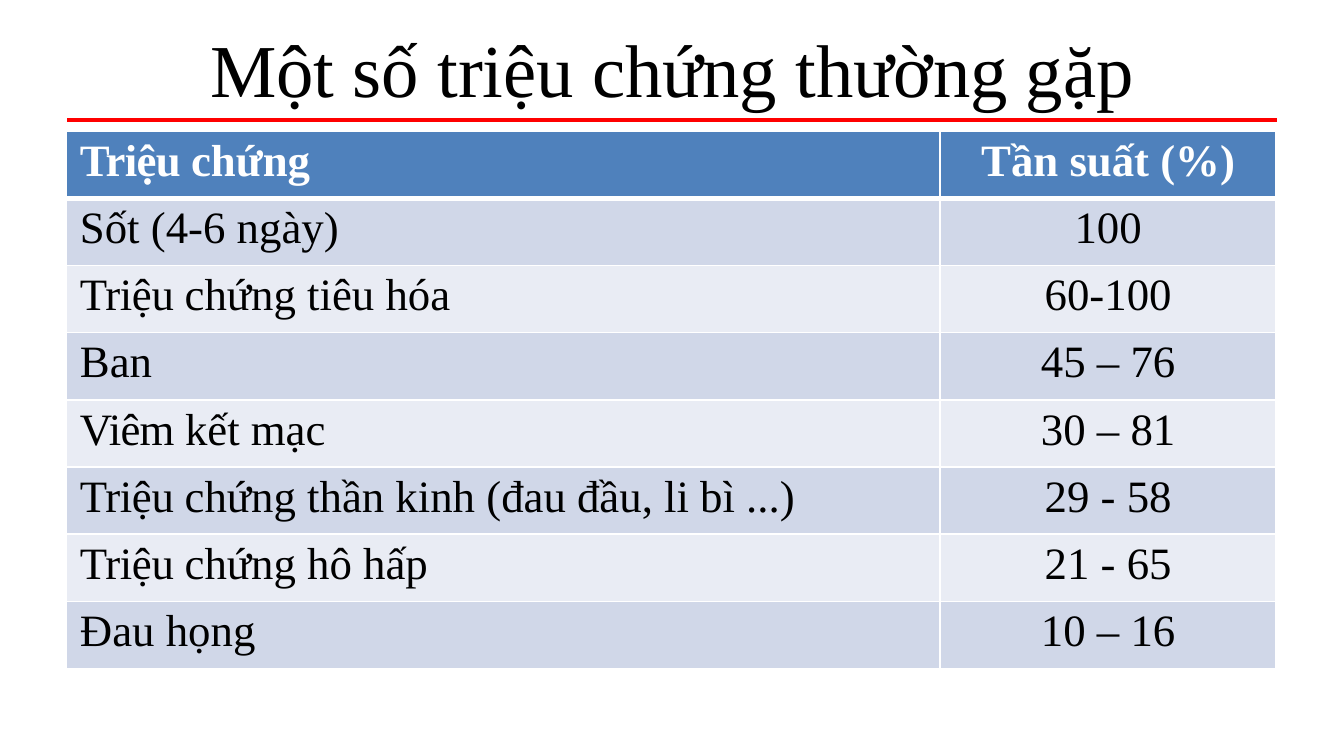
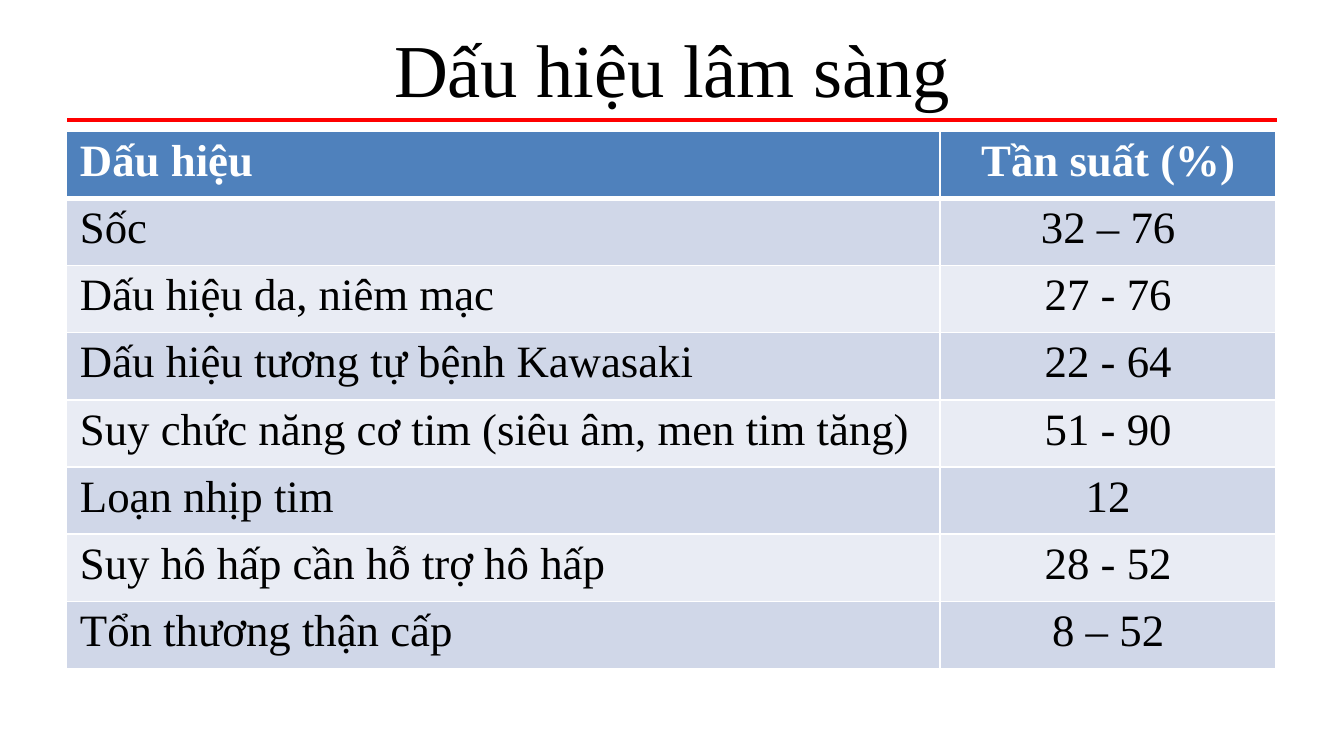
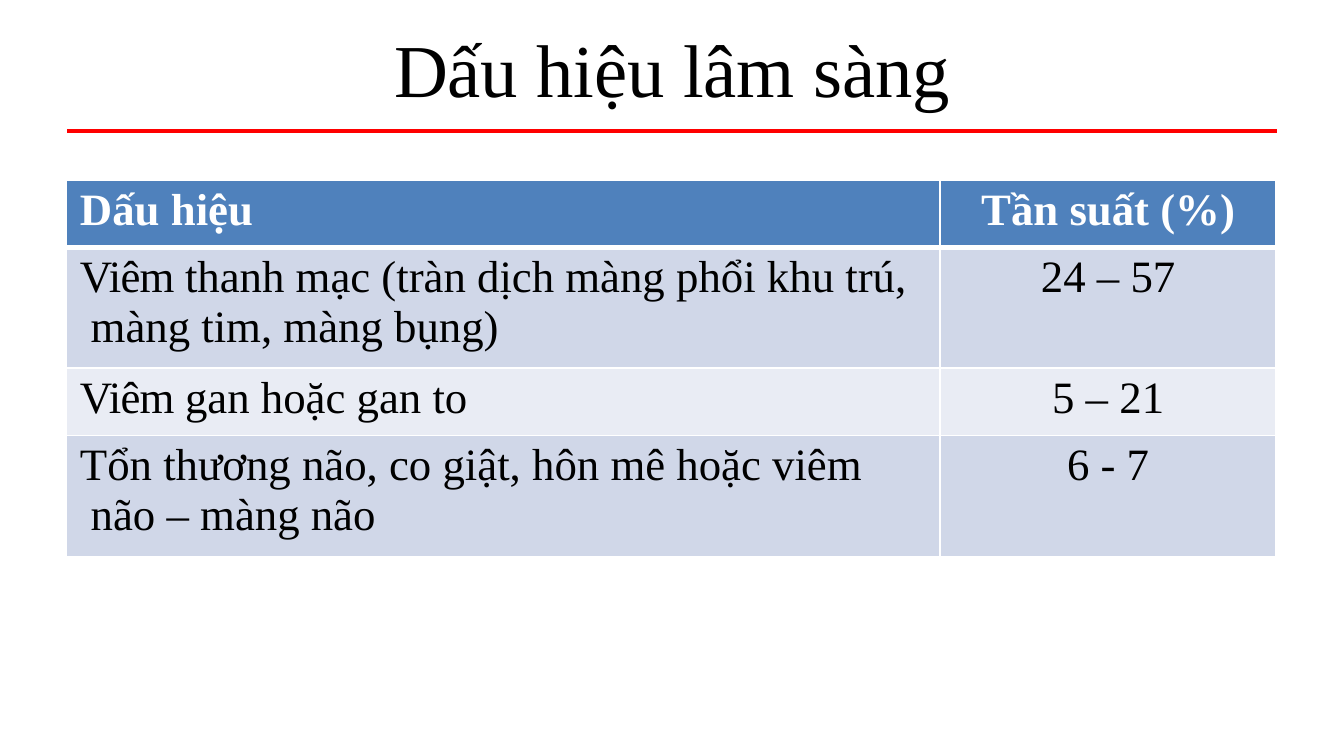
import dataclasses
import typing

import pptx
import pptx.dml.color
import pptx.enum.shapes
import pptx.enum.text
import pptx.oxml
import pptx.oxml.ns
import pptx.presentation
import pptx.slide
import pptx.table
import pptx.text.text
import pptx.util


@dataclasses.dataclass(frozen=True)
class Theme:
    font: str = "Times New Roman"
    title: float = 40
    body: float = 24
    rule: float = 2.25
    thin: float = 1
    thick: float = 3
    ink: str = "000000"
    white: str = "FFFFFF"
    head: str = "4F81BC"
    bands: tuple[str, str] = ("D0D7E8", "E9ECF4")
    red: str = "FF0000"


class Bit(typing.NamedTuple):
    text: str
    track: float = 0


class Row(typing.NamedTuple):
    label: tuple[Bit, ...]
    rate: str
    tall: float = 1


class Page(typing.NamedTuple):
    title: str
    span: float
    line: float
    top: float
    rows: tuple[Row, ...]


THEME = Theme()
WIDTH = pptx.util.Inches(10)
HEIGHT = WIDTH * 9 // 16
UNIT = WIDTH / 20
COLS = (13, 5)
RATE = "Tần suất (%)"
ALIGN = pptx.enum.text.PP_ALIGN


def grid(count: float) -> int:
    return round(count * UNIT)


def color(code: str) -> pptx.dml.color.RGBColor:
    return pptx.dml.color.RGBColor.from_string(code)


def row(text: str, rate: str, lead: str = "", track: float = 0, tall: float = 1) -> Row:
    bits = (Bit(lead, track), Bit(text)) if lead else (Bit(text),)
    return Row(bits, rate, tall)


def write(para: pptx.text.text._Paragraph, bits: tuple[Bit, ...], size: float,
          tint: str, bold: bool = False) -> None:
    for bit in bits:
        run = para.add_run()
        run.text = bit.text
        run.font.name = THEME.font
        run.font.size = pptx.util.Pt(size)
        run.font.bold = bold
        run.font.color.rgb = color(tint)
        if bit.track:
            run.font._element.set("spc", str(round(bit.track * 100)))


def title(slide: pptx.slide.Slide, text: str, span: float) -> None:
    box = slide.shapes.add_textbox(grid(10 - span / 2), grid(0.32), grid(span), grid(1.38))
    frame = box.text_frame
    frame.word_wrap = False
    frame.margin_left = frame.margin_right = frame.margin_bottom = 0
    frame.margin_top = pptx.util.Inches(0.01)
    para = frame.paragraphs[0]
    para.alignment = ALIGN.CENTER
    para.space_before = pptx.util.Pt(0.9)
    write(para, (Bit(text, -0.05),), THEME.title, THEME.ink)


def rule(slide: pptx.slide.Slide, top: float) -> None:
    line = slide.shapes.add_connector(
        pptx.enum.shapes.MSO_CONNECTOR.STRAIGHT, grid(1), grid(top), grid(19), grid(top))
    line.line.color.rgb = color(THEME.red)
    line.line.width = pptx.util.Pt(THEME.rule)
    line._element.spPr.append(pptx.oxml.parse_xml(
        f'<a:effectLst {pptx.oxml.ns.nsdecls("a")}/>'))


def edge(cell: pptx.table._Cell, index: int) -> None:
    sides = {"L": THEME.thin, "R": THEME.thin,
             "T": THEME.thick if index == 1 else THEME.thin,
             "B": THEME.thick if index == 0 else THEME.thin}
    props = cell._tc.get_or_add_tcPr()
    for side, width in sides.items():
        props.append(pptx.oxml.parse_xml(
            f'<a:ln{side} {pptx.oxml.ns.nsdecls("a")} w="{pptx.util.Pt(width)}">'
            f'<a:solidFill><a:srgbClr val="{THEME.white}"/></a:solidFill></a:ln{side}>'))


def fill(cell: pptx.table._Cell, bits: tuple[Bit, ...], index: int, left: bool) -> None:
    head = index == 0
    edge(cell, index)
    cell.fill.solid()
    cell.fill.fore_color.rgb = color(THEME.head if head else THEME.bands[(index - 1) % 2])
    cell.margin_left = cell.margin_bottom = 0
    cell.margin_right = pptx.util.Inches(0.1 if left else 0)
    cell.margin_top = pptx.util.Inches(0.04)
    para = cell.text_frame.paragraphs[0]
    para.space_before = pptx.util.Pt(2.8)
    para.alignment = ALIGN.LEFT if left else ALIGN.CENTER
    if left:
        props = para._p.get_or_add_pPr()
        props.set("marL", str(pptx.util.Inches(0.18)))
        props.set("indent", str(pptx.util.Inches(-0.08)))
    write(para, bits, THEME.body, THEME.white if head else THEME.ink, head)


def chart(slide: pptx.slide.Slide, rows: tuple[Row, ...], top: float) -> None:
    tall = sum(item.tall for item in rows)
    table = slide.shapes.add_table(
        len(rows), len(COLS), grid(0.99), grid(top), grid(sum(COLS)), grid(tall)).table
    table.horz_banding = False
    for column, width in zip(table.columns, COLS):
        column.width = grid(width)
    for index, item in enumerate(rows):
        table.rows[index].height = grid(item.tall)
        fill(table.cell(index, 0), item.label, index, True)
        fill(table.cell(index, 1), (Bit(item.rate),), index, False)


PAGES = (
    Page("Một số triệu chứng thường gặp", 13.86, 1.79, 1.95, (
        row("chứng", RATE, "Triệu ", -0.4),
        row("Sốt (4-6 ngày)", "100"),
        row("chứng tiêu hóa", "60-100", "Triệu ", -0.2),
        row("Ban", "45 – 76"),
        row("kết mạc", "30 – 81", "Viêm ", -0.4),
        row("chứng thần kinh (đau đầu, li bì ...)", "29 - 58", "Triệu ", -0.2),
        row("chứng hô hấp", "21 - 65", "Triệu ", -0.2),
        row("Đau họng", "10 – 16"),
    )),
    Page("Dấu hiệu lâm sàng", 8.36, 1.79, 1.95, (
        row("Dấu hiệu", RATE),
        row("Sốc", "32 – 76"),
        row("Dấu hiệu da, niêm mạc", "27 - 76"),
        row("Dấu hiệu tương tự bệnh Kawasaki", "22 - 64"),
        row("Suy chức năng cơ tim (siêu âm, men tim tăng)", "51 - 90"),
        row("Loạn nhịp tim", "12"),
        row("Suy hô hấp cần hỗ trợ hô hấp", "28 - 52"),
        row("Tổn thương thận cấp", "8 – 52"),
    )),
    Page("Dấu hiệu lâm sàng", 8.36, 1.95, 2.68, (
        row("Dấu hiệu", RATE),
        row("thanh mạc (tràn dịch màng phổi khu trú, màng tim, màng bụng)",
            "24 – 57", "Viêm ", -0.4, 1.8),
        row("gan hoặc gan to", "5 – 21", "Viêm ", -0.4),
        row("Tổn thương não, co giật, hôn mê hoặc viêm não – màng não", "6 - 7", tall=1.8),
    )),
)


def draw(deck: pptx.presentation.Presentation, page: Page) -> None:
    slide = deck.slides.add_slide(deck.slide_layouts[6])
    title(slide, page.title, page.span)
    chart(slide, page.rows, page.top)
    rule(slide, page.line)


def main() -> None:
    deck = pptx.Presentation()
    deck.slide_width = WIDTH
    deck.slide_height = HEIGHT
    for page in PAGES:
        draw(deck, page)
    deck.save("out.pptx")


if __name__ == "__main__":
    main()
